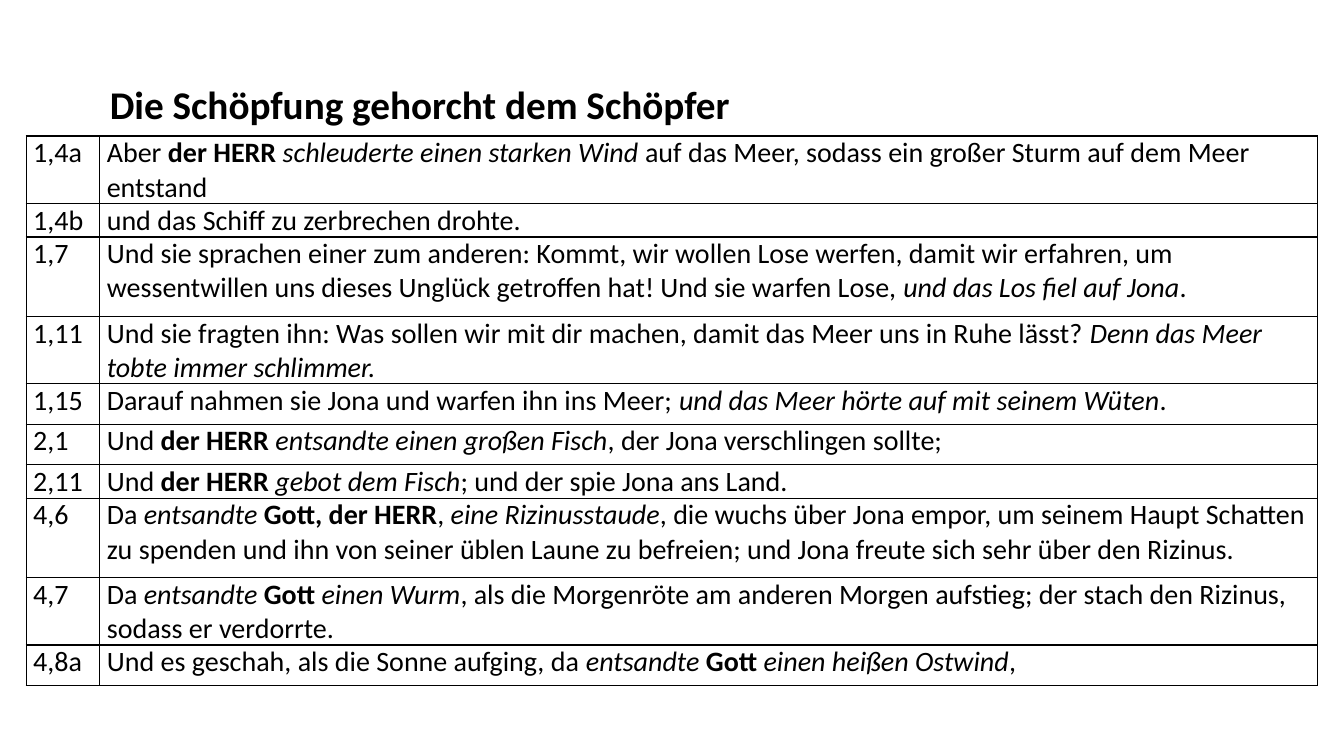
from lxml.etree import SubElement
from pptx import Presentation
from pptx.dml.color import RGBColor
from pptx.enum.text import MSO_AUTO_SIZE
from pptx.oxml.ns import qn
from pptx.util import Inches, Pt

COLORS = {"ink": "000000"}
FONT = "Calibri"
TITLE = "Die Schöpfung gehorcht dem Schöpfer"

# Verse number, row height in inches, text: *bold*, _italic_
VERSES = [
    ("1,4a", 0.4, "Aber *der HERR *_schleuderte einen starken Wind_ auf das Meer, "
     "sodass ein großer Sturm auf dem Meer entstand"),
    ("1,4b", 0.2, "und das Schiff zu zerbrechen drohte."),
    ("1,7", 0.79, "Und sie sprachen einer zum anderen: Kommt, wir wollen Lose werfen, "
     "damit wir erfahren, um wessentwillen uns dieses Unglück getroffen hat! "
     "Und sie warfen Lose, _und das Los fiel auf Jona_."),
    ("1,11", 0.59, "Und sie fragten ihn: Was sollen wir mit dir machen, damit das Meer "
     "uns in Ruhe lässt? _Denn das Meer tobte immer schlimmer._"),
    ("1,15", 0.4, "Darauf nahmen sie Jona und warfen ihn ins Meer; "
     "_und das Meer hörte auf mit seinem Wüten_."),
    ("2,1", 0.4, "Und *der HERR *_entsandte einen großen Fisch_, "
     "der Jona verschlingen sollte;"),
    ("2,11", 0.2, "Und *der HERR *_gebot dem Fisch_; und der spie Jona ans Land."),
    ("4,6", 0.79, "Da _entsandte _*Gott, der HERR*, _eine Rizinusstaude_, die wuchs über "
     "Jona empor, um seinem Haupt Schatten zu spenden und ihn von seiner üblen Laune "
     "zu befreien; und Jona freute sich sehr über den Rizinus."),
    ("4,7", 0.59, "Da _entsandte _*Gott *_einen Wurm_, als die Morgenröte am anderen "
     "Morgen aufstieg; der stach den Rizinus, sodass er verdorrte."),
    ("4,8a", 0.4, "Und es geschah, als die Sonne aufging, da _entsandte _*Gott *"
     "_einen heißen Ostwind_,"),
]


def write(frame, text, size=20, color="ink", spacing=None, before=None):
    """Fill the frame with one paragraph; *bold* and _italic_ marks become runs."""
    para = frame.paragraphs[0]
    para.line_spacing = spacing
    para.space_before = before
    for i, chunk in enumerate(text.split("*")):
        for j, part in enumerate(chunk.split("_")):
            if part:
                run = para.add_run()
                run.text = part
                font = run.font
                font.name, font.size = FONT, Pt(size)
                font.bold, font.italic = i % 2 == 1, j % 2 == 1
                font.color.rgb = RGBColor.from_string(COLORS[color])


def add_title(slide, left, top, width, height):
    box = slide.shapes.add_textbox(*map(Inches, (left, top, width, height)))
    frame = box.text_frame
    frame.word_wrap = False
    frame.auto_size = MSO_AUTO_SIZE.SHAPE_TO_FIT_TEXT
    write(frame, f"*{TITLE}*", size=28, spacing=1.07, before=Pt(12))


def set_border(cell, color="ink", width=1):
    """Draw all four sides; they must precede the fill in the cell's XML."""
    props = cell._tc.get_or_add_tcPr()
    for side in ("a:lnL", "a:lnR", "a:lnT", "a:lnB"):
        line = SubElement(props, qn(side), w=str(Pt(width)))
        fill = SubElement(line, qn("a:solidFill"))
        SubElement(fill, qn("a:srgbClr"), val=COLORS[color])


def add_verses(slide, left, top, width, label=0.73):
    height = sum(verse[1] for verse in VERSES)
    table = slide.shapes.add_table(
        len(VERSES), 2, *map(Inches, (left, top, width, height))).table
    table.first_row = table.horz_banding = False
    table.columns[0].width = Inches(label)
    table.columns[1].width = Inches(width - label)
    for row, (number, tall, text) in zip(table.rows, VERSES):
        row.height = Inches(tall)
        for cell, words in zip(row.cells, (number, text)):
            cell.margin_left = cell.margin_right = Inches(0.07)
            cell.margin_top = cell.margin_bottom = 0
            set_border(cell)
            cell.fill.background()
            write(cell.text_frame, words)


def main():
    deck = Presentation()
    deck.slide_width, deck.slide_height = Inches(13.33), Inches(7.5)
    slide = deck.slides.add_slide(deck.slide_layouts[6])
    add_title(slide, 0.99, 0.71, 6.42, 0.58)
    add_verses(slide, 0.26, 1.35, 12.81)
    deck.save("out.pptx")


if __name__ == "__main__":
    main()
